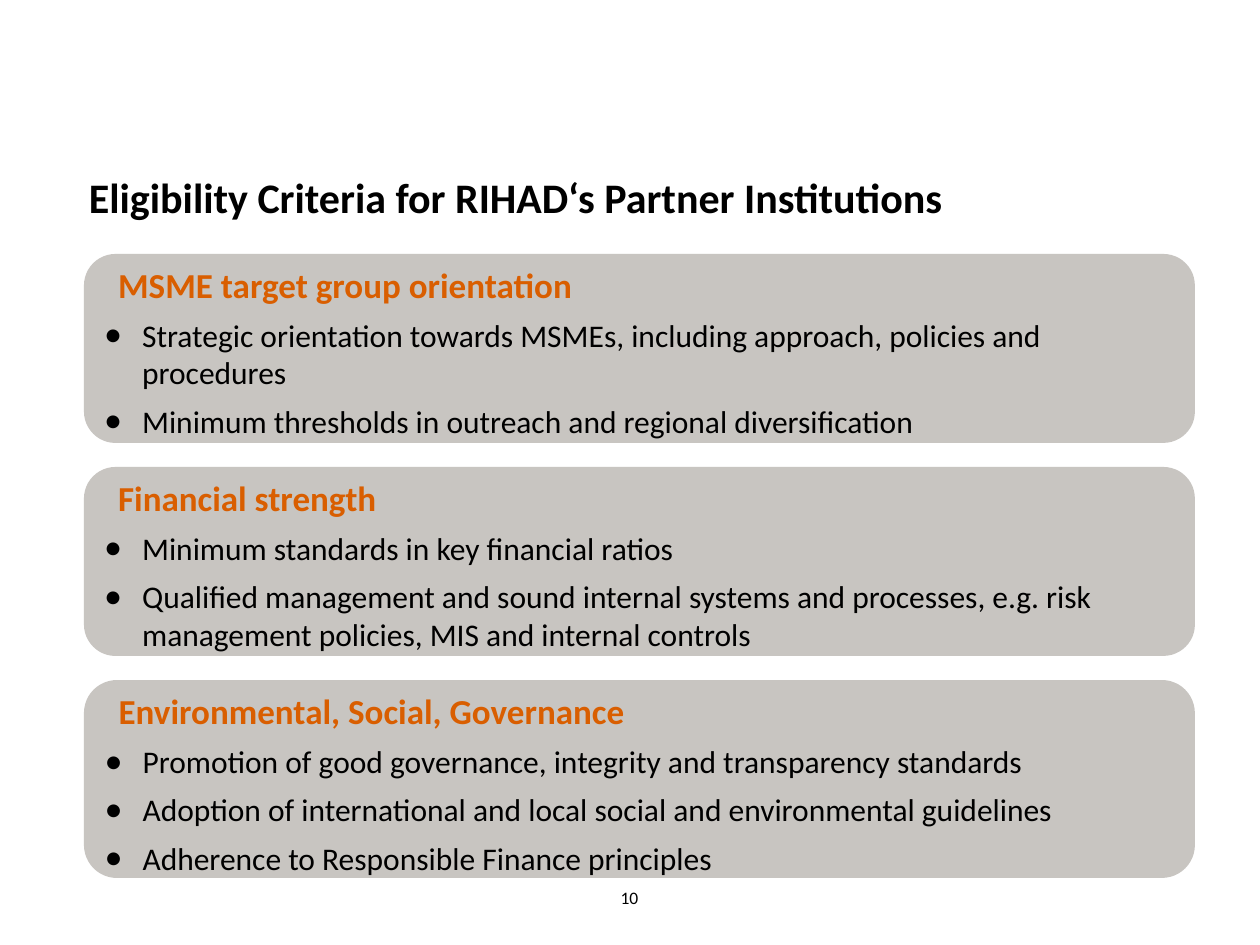
from lxml.etree import SubElement
from pptx import Presentation
from pptx.dml.color import RGBColor
from pptx.enum.shapes import MSO_SHAPE as Shape
from pptx.enum.text import MSO_ANCHOR as Anchor, PP_ALIGN as Align
from pptx.oxml.ns import qn
from pptx.util import Emu, Pt

SCALE = 914400 / 126
BLACK = RGBColor(0, 0, 0)
ORANGE = RGBColor(0xD9, 0x5E, 0x00)
TAUPE = RGBColor(0x77, 0x6F, 0x65)

LEFT, TOP, WIDTH, GAP = 84, 254, 1111, 24
HEAD = dict(size=Pt(20), bold=True, color=ORANGE)
ITEM = dict(size=Pt(18), bold=False, color=BLACK)

# Heading, panel height, criteria
PANELS = [
    ("MSME target group orientation", 189, [
        "Strategic orientation towards MSMEs, including approach, policies and procedures",
        "Minimum thresholds in outreach and regional diversification",
    ]),
    ("Financial strength", 189, [
        "Minimum standards in key financial ratios",
        "Qualified management and sound internal systems and processes, "
        "e.g. risk management policies, MIS and internal controls",
    ]),
    ("Environmental, Social, Governance", 198, [
        "Promotion of good governance, integrity and transparency standards",
        "Adoption of international and local social and environmental guidelines",
        "Adherence to Responsible Finance principles",
    ]),
]


def px(n):
    return Emu(round(n * SCALE))


def set_frame(frame, anchor):
    frame.word_wrap = True
    frame.vertical_anchor = anchor
    for side in ("left", "top", "right", "bottom"):
        setattr(frame, f"margin_{side}", 0)


def style(para, color, **form):
    para.font.name = "Calibri"
    para.font.color.rgb = color
    for key, value in form.items():
        setattr(para.font, key, value)


def indent(para, left, first=0):
    props = para._p.get_or_add_pPr()
    props.set("marL", str(px(left)))
    props.set("indent", str(px(first)))
    return props


def add_label(slide, box, text, form, anchor=Anchor.TOP, align=Align.LEFT, line=1.0):
    frame = slide.shapes.add_textbox(*map(px, box)).text_frame
    set_frame(frame, anchor)
    para = frame.paragraphs[0]
    para.text = text
    para.alignment = align
    para.line_spacing = line
    style(para, **form)


def add_bullet(para):
    props = indent(para, 49, -38)
    SubElement(props, qn("a:buSzPct"), val="115000")
    SubElement(props, qn("a:buFont"), typeface="Calibri")
    SubElement(props, qn("a:buChar"), char="•")


def add_panel(slide, top, height, head, items):
    panel = slide.shapes.add_shape(Shape.ROUNDED_RECTANGLE,
                                   *map(px, (LEFT, top, WIDTH, height)))
    panel.shadow.inherit = False
    panel.line.fill.background()
    panel.fill.solid()
    panel.fill.fore_color.rgb = TAUPE
    tone = panel._element.spPr.find(qn("a:solidFill"))[0]
    SubElement(tone, qn("a:alpha"), val="40000")

    frame = panel.text_frame
    set_frame(frame, Anchor.TOP)
    for i, text in enumerate([head] + items):
        para = frame.add_paragraph() if i else frame.paragraphs[0]
        para.text = text
        para.alignment = Align.LEFT
        para.space_after = Pt(6)
        if i:
            add_bullet(para)
        else:
            indent(para, 25)
        style(para, **(ITEM if i else HEAD))


def main():
    deck = Presentation()
    deck.slide_width, deck.slide_height = px(1260), px(945)
    slide = deck.slides.add_slide(deck.slide_layouts[6])

    # Title
    add_label(slide, (89, 175, 1081, 49),
              "Eligibility Criteria for RIHAD‘s Partner Institutions",
              dict(size=Pt(24), bold=True, color=BLACK), line=0.95)

    # Criteria panels, stacked with equal gaps
    top = TOP
    for head, height, items in PANELS:
        add_panel(slide, top, height, head, items)
        top += height + GAP

    # Page number
    add_label(slide, (592, 864, 75, 44), "10", dict(size=Pt(10), color=BLACK),
              Anchor.BOTTOM, Align.CENTER)

    deck.save("out.pptx")


if __name__ == "__main__":
    main()
